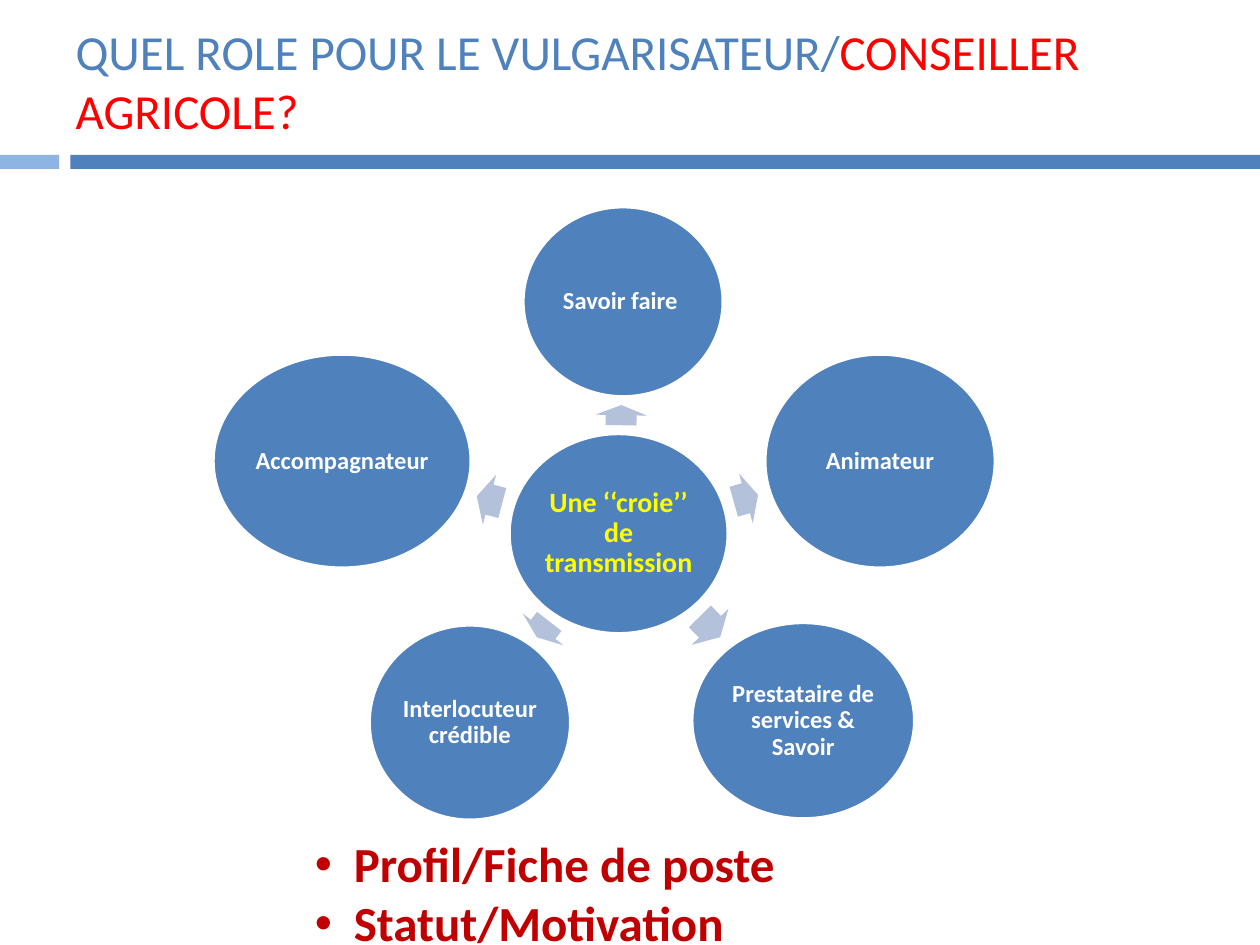
from dataclasses import dataclass

from lxml.etree import SubElement
from pptx import Presentation
from pptx.dml.color import RGBColor
from pptx.enum.shapes import MSO_SHAPE
from pptx.enum.text import MSO_ANCHOR, PP_ALIGN
from pptx.oxml.ns import qn
from pptx.util import Inches, Pt


@dataclass(frozen=True)
class Theme:
    font: str = "Calibri"
    blue: str = "4F81BD"
    light_blue: str = "8EB4E3"
    arrow: str = "B3C1DB"
    white: str = "FFFFFF"
    yellow: str = "FFFF00"
    red: str = "FF0000"
    dark_red: str = "C00000"
    title_size: int = 28
    hub_size: int = 16
    role_size: int = 14


THEME = Theme()

HUB = ("Une ‘‘croie’’ de transmission", (2.35, 1.8, 1.74, 1.59))
ROLES = [
    ("Savoir faire ", (2.46, 0, 1.59, 1.51), (3.16, 1.45, 0.16, 0.41), 271.1),
    ("Animateur", (4.38, 1.17, 1.83, 1.7), (4.13, 2.11, 0.2, 0.41), 344.5),
    ("Prestataire de services & Savoir", (3.8, 3.3, 1.77, 1.56), (3.83, 3.13, 0.23, 0.41), 45.5),
    ("Interlocuteur crédible", (1.24, 3.32, 1.6, 1.55), (2.54, 3.15, 0.16, 0.41), 128),
    ("Accompagnateur", (0, 1.17, 2.05, 1.7), (2.09, 2.12, 0.21, 0.41), 194.9),
]


def add_text(p, text, *, size, color, bold=False):
    r = p.add_run()
    r.text = text
    r.font.name = THEME.font
    r.font.size = Pt(size)
    r.font.bold = bold
    r.font.color.rgb = RGBColor.from_string(color)
    return r


def add_filled(s, kind, box, fill):
    sp = s.shapes.add_shape(kind, *(Inches(v) for v in box))
    sp.shadow.inherit = False
    sp.fill.solid()
    sp.fill.fore_color.rgb = RGBColor.from_string(fill)
    sp.line.fill.background()
    return sp


def within(box, part):
    return (box[0] + part[0], box[1] + part[1], part[2], part[3])


def add_circle(s, box, text, size, color):
    sp = add_filled(s, MSO_SHAPE.OVAL, box, THEME.blue)
    sp.line.color.rgb = RGBColor.from_string(THEME.white)
    sp.line.width = Pt(2)
    tf = sp.text_frame
    tf.word_wrap = True
    tf.vertical_anchor = MSO_ANCHOR.MIDDLE
    tf.margin_left = tf.margin_right = tf.margin_top = tf.margin_bottom = Inches(0.02)
    p = tf.paragraphs[0]
    p.alignment = PP_ALIGN.CENTER
    p.line_spacing = 0.9
    add_text(p, text, size=size, color=color, bold=True)


def add_arrow(s, box, rotation):
    sp = add_filled(s, MSO_SHAPE.RIGHT_ARROW, box, THEME.arrow)
    sp.adjustments[0] = 0.6
    sp.adjustments[1] = 0.5
    sp.rotation = rotation


def add_bars(s, box):
    left, top, width, height = box
    short, gap = 0.47, 0.09
    start = short + gap
    add_filled(s, MSO_SHAPE.RECTANGLE, (left + start, top, width - start, height), THEME.blue)
    add_filled(s, MSO_SHAPE.RECTANGLE, (left, top, short, height), THEME.light_blue)


def add_title(s, box):
    sp = s.shapes.title
    sp.left, sp.top, sp.width, sp.height = (Inches(v) for v in box)
    tf = sp.text_frame
    tf.vertical_anchor = MSO_ANCHOR.MIDDLE
    p = tf.paragraphs[0]
    p.alignment = PP_ALIGN.LEFT
    add_text(p, "QUEL ROLE POUR LE VULGARISATEUR/", size=THEME.title_size, color=THEME.blue)
    add_text(p, "CONSEILLER AGRICOLE?", size=THEME.title_size, color=THEME.red)


def add_role_wheel(s, box):
    text, part = HUB
    add_circle(s, within(box, part), text, THEME.hub_size, THEME.yellow)
    for text, circle, arrow, rotation in ROLES:
        add_arrow(s, within(box, arrow), rotation)
        add_circle(s, within(box, circle), text, THEME.role_size, THEME.white)


def add_bullets(s, box, items):
    tf = s.shapes.add_textbox(*(Inches(v) for v in box)).text_frame
    tf.word_wrap = True
    for i, item in enumerate(items):
        p = tf.add_paragraph() if i else tf.paragraphs[0]
        add_text(p, item, size=THEME.title_size, color=THEME.dark_red, bold=True)
        pPr = p._p.get_or_add_pPr()
        pPr.set("marL", str(Inches(0.31)))
        pPr.set("indent", str(-Inches(0.31)))
        SubElement(pPr, qn("a:buFont")).set("typeface", "Arial")
        SubElement(pPr, qn("a:buChar")).set("char", "•")


def main():
    prs = Presentation()
    prs.slide_width, prs.slide_height = Inches(10), Inches(7.5)
    s = prs.slides.add_slide(prs.slide_layouts[5])
    add_bars(s, (0, 1.23, 10, 0.11))
    add_title(s, (0.5, 0.13, 9, 1.02))
    add_role_wheel(s, (1.69, 1.64, 6.21, 4.87))
    add_bullets(s, (2.4, 6.57, 4.09, 1.04), ["Profil/Fiche de poste", "Statut/Motivation"])
    prs.save("out.pptx")


if __name__ == "__main__":
    main()
